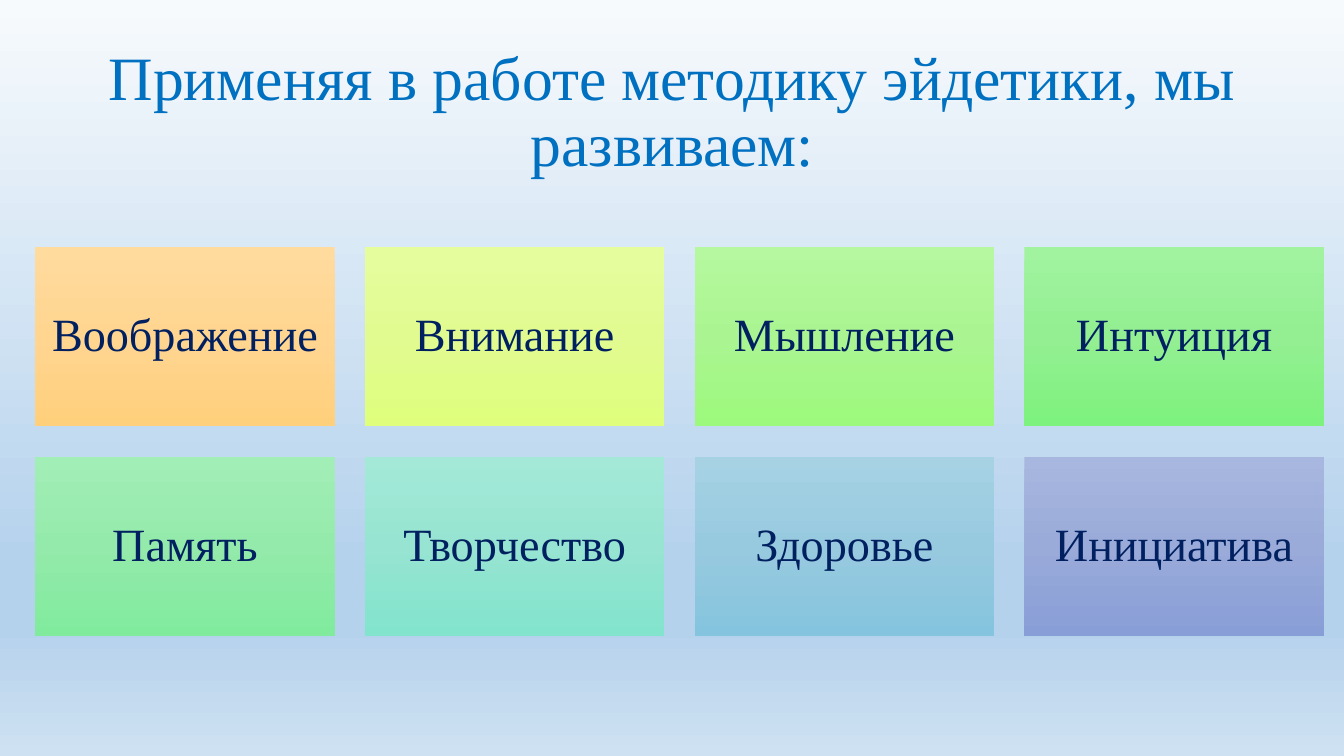
from pptx import Presentation, util as u
from pptx.dml.color import RGBColor
from pptx.enum import shapes, text
from pptx.oxml import ns, xmlchemy as xml

theme = {
    "font": "Times New Roman",
    "title": {"size": 44, "color": "0070C0"},
    "label": {"size": 33, "color": "002060"},
    "back": {0: "F7FAFD", 74: "B5D2EC", 83: "B5D2EC", 100: "CEE1F2"},
    "tiles": [
        ("Воображение", "FFDB9E", "FFD590", "FFD07C"),
        ("Внимание", "E6FD9E", "E1FB91", "DFFF7C"),
        ("Мышление", "B6F89F", "AAF591", "9DF97D"),
        ("Интуиция", "A1F3A0", "93EF92", "7EF27E"),
        ("Память", "A2EEB7", "94EAAB", "80EB9D"),
        ("Творчество", "A4E9D8", "96E4D1", "82E4CD"),
        ("Здоровье", "A6D2E4", "98CADF", "85C4DE"),
        ("Инициатива", "A8B7DF", "9AABD9", "889ED7"),
    ],
}


def shade(fill, root, stops):
    """Fill from top to bottom with stops given as {percent: colour}."""
    fill.gradient()
    fill.gradient_angle = 270
    grad = next(root.iter(ns.qn("a:gsLst")))
    for old in list(grad):
        grad.remove(old)
    for place, color in stops.items():
        stop = xml.OxmlElement("a:gs")
        stop.set("pos", str(place * 1000))
        tint = xml.OxmlElement("a:srgbClr")
        tint.set("val", color)
        stop.append(tint)
        grad.append(stop)


def write(shape, words, style, inset):
    """Put one centred paragraph in the shape."""
    frame = shape.text_frame
    form = {"word_wrap": True, "vertical_anchor": text.MSO_ANCHOR.MIDDLE}
    form.update({f"margin_{side}": u.Inches(gap) for side, gap in inset.items()})
    for key, value in form.items():
        setattr(frame, key, value)
    para = frame.paragraphs[0]
    para.alignment = text.PP_ALIGN.CENTER
    para.line_spacing = 0.9
    run = para.add_run()
    run.text = words
    run.font.name = theme["font"]
    run.font.size = u.Pt(style["size"])
    run.font.color.rgb = RGBColor.from_string(style["color"])


# Slide and background
deck = Presentation()
deck.slide_width, deck.slide_height = u.Inches(13.33), u.Inches(7.5)
slide = deck.slides.add_slide(deck.slide_layouts[6])
shade(slide.background.fill, slide.element, theme["back"])

# Title
title = slide.shapes.add_textbox(
    u.Inches(0.92), u.Inches(0.4), u.Inches(11.5), u.Inches(1.45))
write(title, "Применяя в работе методику эйдетики, мы развиваем:",
      theme["title"], {"left": 0.1, "right": 0.1, "top": 0.05, "bottom": 0.05})

# Grid of skills, four to a row
wide, high = 2.97, 1.78
gap = 0.3
inset = dict.fromkeys(("left", "right", "top", "bottom"), 0.14)
for index, (name, top, mid, low) in enumerate(theme["tiles"]):
    row, col = divmod(index, 4)
    tile = slide.shapes.add_shape(
        shapes.MSO_SHAPE.RECTANGLE,
        u.Inches(0.35 + col * (wide + gap)), u.Inches(2.45 + row * (high + gap)),
        u.Inches(wide), u.Inches(high))
    tile.shadow.inherit = False
    tile.line.fill.background()
    shade(tile.fill, tile.element, {0: top, 50: mid, 100: low})
    write(tile, name, theme["label"], inset)

deck.save("out.pptx")
